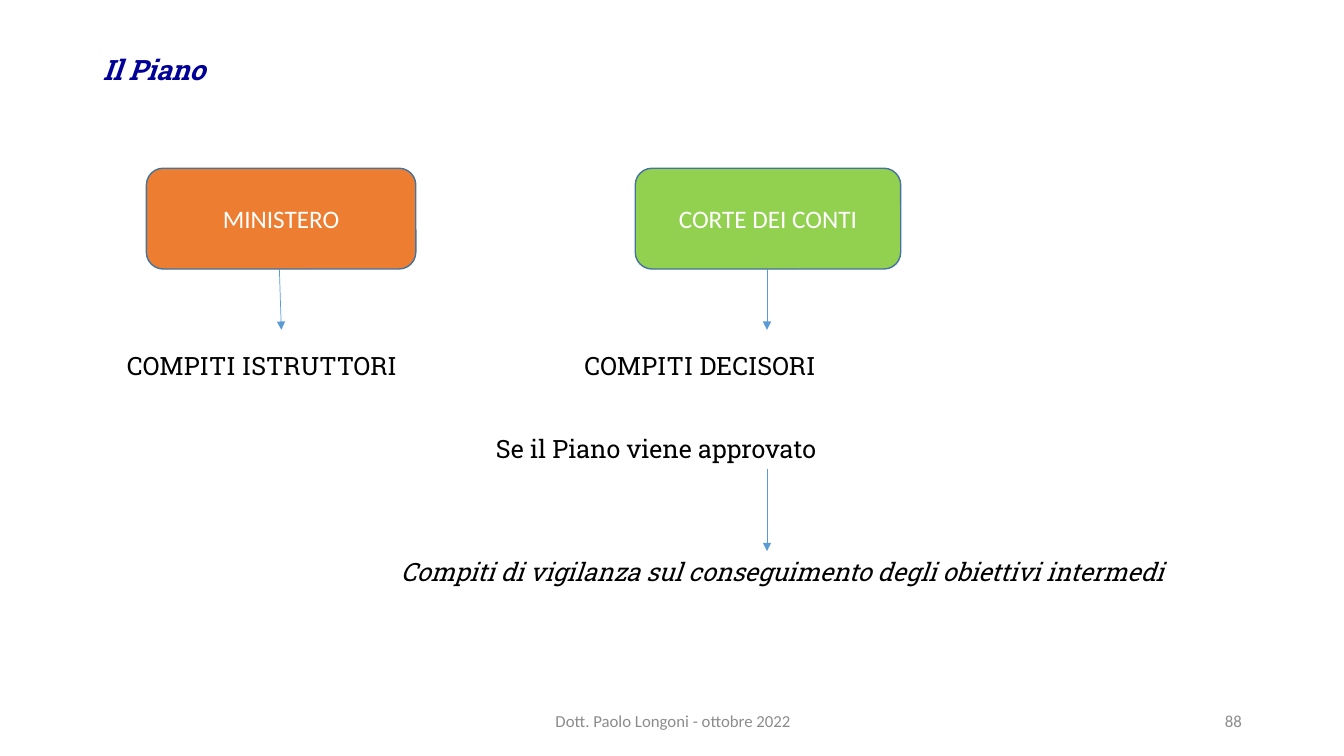
from pptx import Presentation
from pptx import util as u
from pptx.dml.color import RGBColor
from pptx.enum import shapes, text
from pptx.oxml.ns import qn
from lxml import etree

Cm, Pt = u.Cm, u.Pt
Left, Mid, Right = text.PP_ALIGN.LEFT, text.PP_ALIGN.CENTER, text.PP_ALIGN.RIGHT


def paint(part, tone):
    part.rgb = RGBColor.from_string(tone)


def write(shape, words, size, face, tone, align, slant=False, bold=False):
    frame = shape.text_frame
    frame.text = words
    frame.word_wrap = True
    frame.vertical_anchor = text.MSO_ANCHOR.MIDDLE
    line = frame.paragraphs[0]
    line.alignment = align
    font = line.runs[0].font
    font.size, font.name = Pt(size), face
    font.italic, font.bold = slant, bold
    paint(font.color, tone)


deck = Presentation()
deck.slide_width, deck.slide_height = Cm(33.87), Cm(19.05)
slide = deck.slides.add_slide(deck.slide_layouts[5])
items = slide.shapes

title = items.title
title.left, title.top, title.width, title.height = Cm(2.34), Cm(1.02), Cm(29.21), Cm(1.45)
write(title, "Il Piano", 20, "Roboto Slab", "000099", Left, True, True)

bodies = [
    ("MINISTERO", 3.69, 6.79, "ED7D31"),
    ("CORTE DEI CONTI", 16.01, 6.69, "92D050"),
]
for words, x, wide, tone in bodies:
    box = items.add_shape(shapes.MSO_SHAPE.ROUNDED_RECTANGLE, Cm(x), Cm(4.24), Cm(wide), Cm(2.54))
    box.shadow.inherit = False
    box.fill.solid()
    paint(box.fill.fore_color, tone)
    paint(box.line.color, "43739E")
    box.line.width = Pt(1)
    write(box, words, 18, "Calibri", "FFFFFF", Mid)

tasks = [
    ("COMPITI ISTRUTTORI", 3.2, 9.2, 8, False),
    ("COMPITI DECISORI", 14.73, 9.2, 8, False),
    ("Se il Piano viene approvato", 12.5, 11.29, 10, False),
    ("Compiti di vigilanza sul conseguimento degli obiettivi intermedi", 10.1, 14.39, 21, True),
]
for words, x, y, wide, slant in tasks:
    note = items.add_textbox(Cm(x), Cm(y - 0.5), Cm(wide), Cm(1))
    frame = note.text_frame
    frame.margin_left = frame.margin_right = frame.margin_top = frame.margin_bottom = 0
    write(note, words, 18, "Roboto Slab", "000000", Left, slant)

arrows = [
    (7.04, 6.78, 7.09, 8.31),
    (19.33, 6.78, 19.33, 8.31),
    (19.33, 11.81, 19.33, 13.89),
]
for ends in arrows:
    arrow = items.add_connector(shapes.MSO_CONNECTOR.STRAIGHT, *[Cm(end) for end in ends])
    paint(arrow.line.color, "5B9BD5")
    arrow.line.width = Pt(0.5)
    etree.SubElement(arrow.line._get_or_add_ln(), qn("a:tailEnd"), type="triangle")
    etree.SubElement(arrow._element.spPr, qn("a:effectLst"))

feet = [
    ("Dott. Paolo Longoni - ottobre 2022", 6.55, 20.83, Mid),
    ("88", 23.93, 7.62, Right),
]
for words, x, wide, align in feet:
    foot = items.add_textbox(Cm(x), Cm(17.65), Cm(wide), Cm(1.02))
    write(foot, words, 12, "Calibri", "8C8C8C", align)

deck.save("out.pptx")
